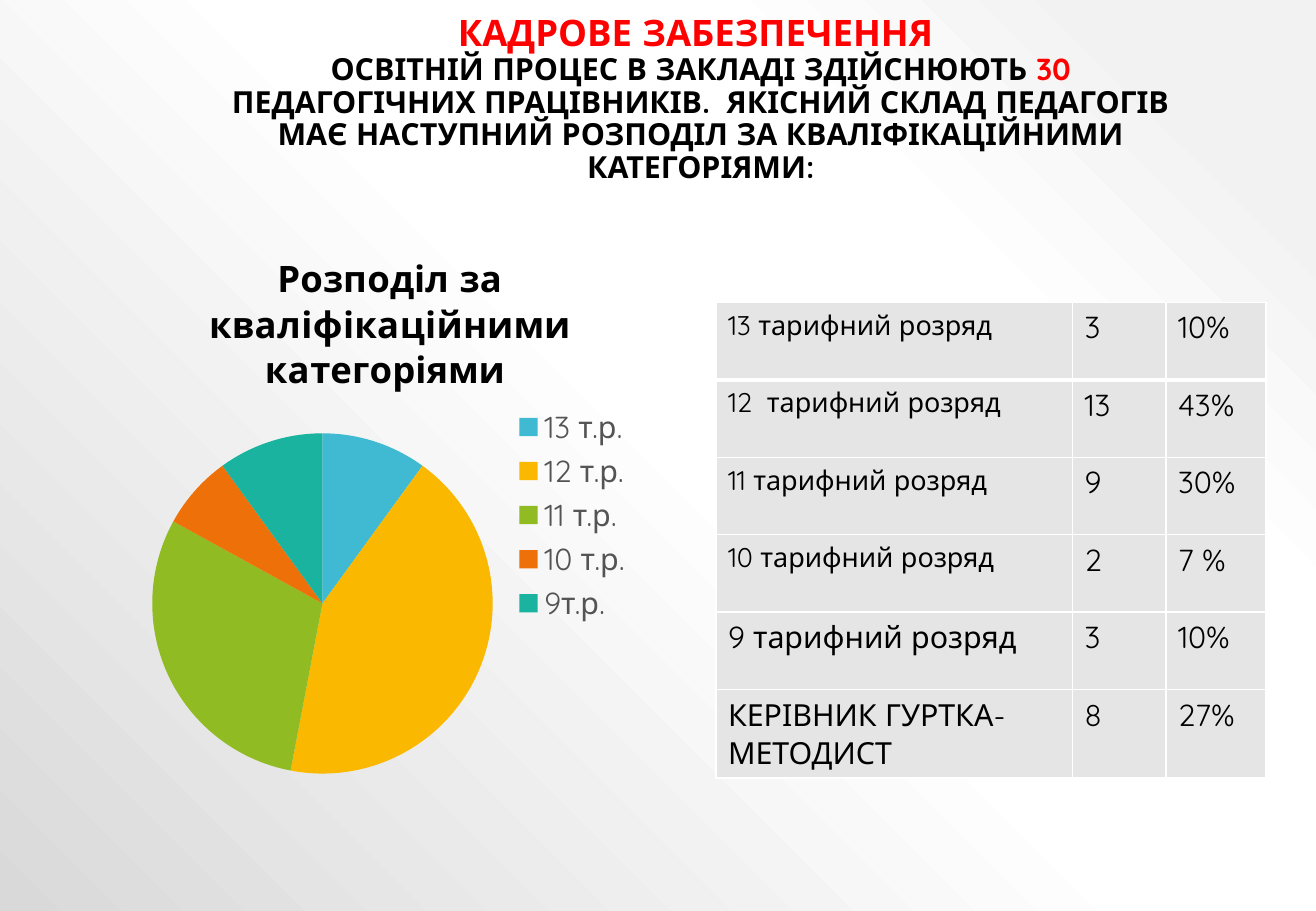
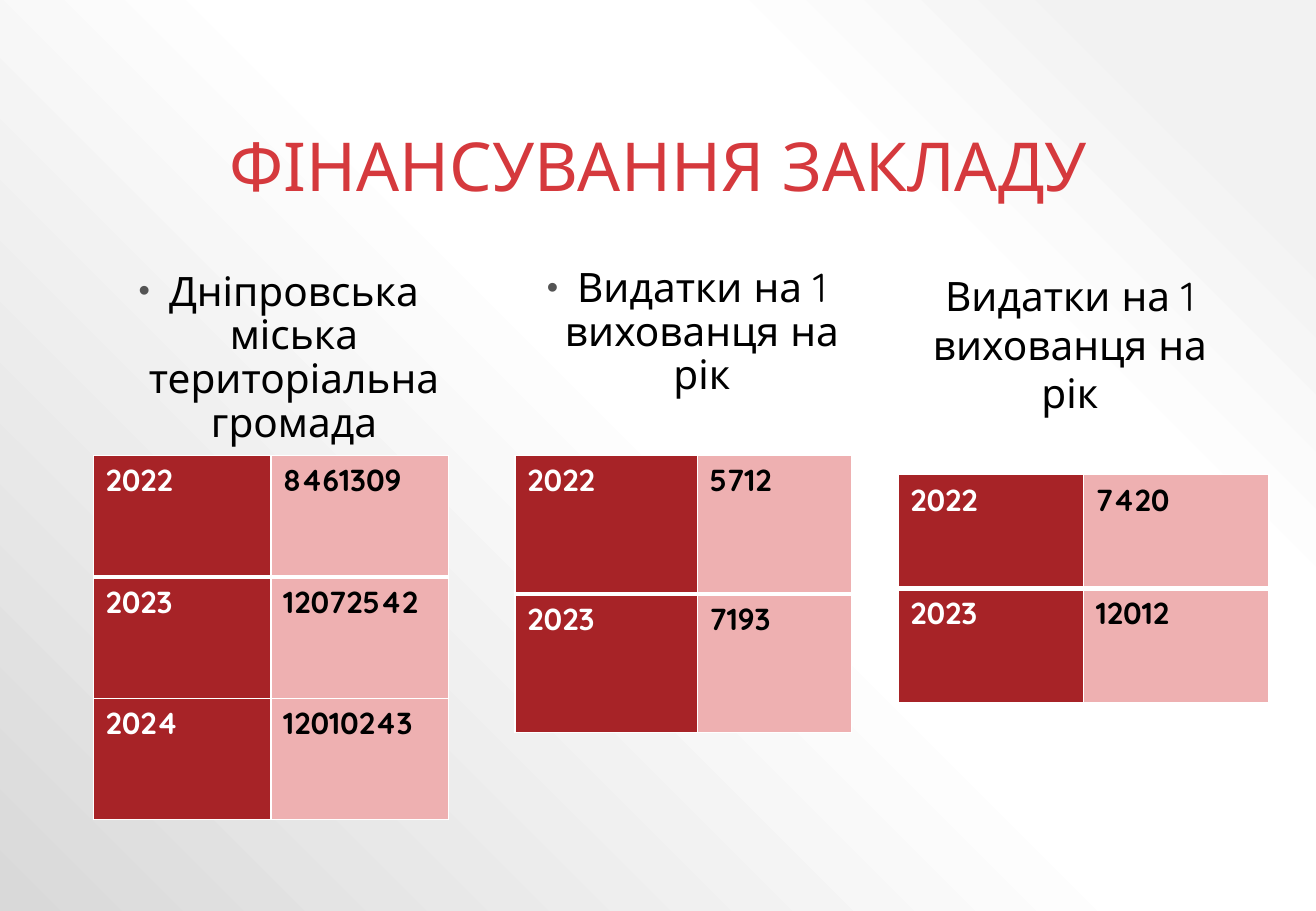
from copy import deepcopy

from lxml import etree
from pptx import Presentation
from pptx.chart.data import CategoryChartData
from pptx.dml.color import RGBColor
from pptx.enum.chart import XL_CHART_TYPE as ChartType, XL_LEGEND_POSITION as LegendPosition
from pptx.enum.text import MSO_ANCHOR as Anchor, MSO_AUTO_SIZE as AutoSize, PP_ALIGN as Align
from pptx.oxml import parse_xml
from pptx.oxml.ns import nsdecls, qn
from pptx.util import Inches, Pt

FONT = "Quicksand"
COLORS = {
    "text": "000000", "white": "FFFFFF", "gray": "545454", "cell": "E5E5E5",
    "accent": "FF0000", "heading": "D5393D", "year": "A72327", "amount": "EEB0B1",
}
PIE_COLORS = ["40BAD2", "FAB900", "90BB23", "EE7008", "1AB39F"]
BACKGROUND_STOPS = [(10, "F2F2F2"), (28, "FFFFFF"), (48, "FFFFFF"), (100, "D9D9D9")]


def rgb(name):
    return RGBColor.from_string(COLORS[name])


def style_font(font, size=18, color="text", bold=False):
    font.name, font.size, font.bold = FONT, Pt(size), bold
    font.color.rgb = rgb(color)


def write(paragraph, text, align=None, spacing=None, **font_style):
    """Append a formatted run; a final newline becomes a line break."""
    if align is not None:
        paragraph.alignment = align
    if spacing is not None:
        paragraph.line_spacing = spacing
    run = paragraph.add_run()
    run.text = text.rstrip("\n")
    style_font(run.font, **font_style)
    if text.endswith("\n"):
        paragraph.add_line_break()
        paragraph._p[-1].append(deepcopy(run._r.rPr))


def add_bullet(paragraph):
    properties = paragraph._p.get_or_add_pPr()
    properties.set("marL", str(Inches(0.3)))
    properties.set("indent", str(Inches(-0.25)))
    color = etree.SubElement(properties, qn("a:buClr"))
    etree.SubElement(color, qn("a:srgbClr"), val=COLORS["gray"])
    etree.SubElement(properties, qn("a:buSzPct"), val="80000")
    etree.SubElement(properties, qn("a:buFont"), typeface="Arial")
    etree.SubElement(properties, qn("a:buChar"), char="•")


def set_borders(cell, row):
    """Thin white borders, with a thick rule below the first row."""
    thick_side = {0: "lnB", 1: "lnT"}.get(row)
    for side in ("lnL", "lnR", "lnT", "lnB"):
        width = Pt(3 if side == thick_side else 1)
        cell._tc.get_or_add_tcPr().append(parse_xml(
            f'<a:{side} {nsdecls("a")} w="{width}"><a:solidFill>'
            f'<a:srgbClr val="{COLORS["white"]}"/></a:solidFill></a:{side}>'))


class Deck:
    """Holds the style and the current slide; lengths are percent of the slide."""

    def __init__(self):
        self.presentation = Presentation()
        self.presentation.slide_width = Inches(10.83)
        self.presentation.slide_height = Inches(7.5)
        self.slide = None
        self.set_background()

    def set_background(self):
        master = self.presentation.slide_master
        master.background.fill.gradient()
        plain = master.element.xpath("p:cSld/p:bg/p:bgPr/a:gradFill")[0]
        stops = "".join(f'<a:gs pos="{position * 1000}"><a:srgbClr val="{color}"/></a:gs>'
                        for position, color in BACKGROUND_STOPS)
        plain.getparent().replace(plain, parse_xml(
            f'<a:gradFill {nsdecls("a")} rotWithShape="1"><a:gsLst>{stops}</a:gsLst>'
            '<a:path path="circle"><a:fillToRect l="100000" b="100000"/></a:path></a:gradFill>'))

    def across(self, percent):
        return round(self.presentation.slide_width * percent / 100)

    def down(self, percent):
        return round(self.presentation.slide_height * percent / 100)

    def box(self, left, top, width, height):
        return self.across(left), self.down(top), self.across(width), self.down(height)

    def add_slide(self):
        self.slide = self.presentation.slides.add_slide(self.presentation.slide_layouts[5])

    def title(self, box, runs, bottom_inset=0.05):
        title = self.slide.shapes.title
        title.left, title.top, title.width, title.height = self.box(*box)
        frame = title.text_frame
        frame.auto_size, frame.vertical_anchor = AutoSize.NONE, Anchor.BOTTOM
        frame.margin_bottom = Inches(bottom_inset)
        for text, font_style in runs:
            write(frame.paragraphs[0], text, align=Align.CENTER, spacing=0.9, **font_style)

    def caption(self, box, text, bullet=False):
        frame = self.slide.shapes.add_textbox(*self.box(*box)).text_frame
        frame.word_wrap = True
        paragraph = frame.paragraphs[0]
        if bullet:
            add_bullet(paragraph)
        write(paragraph, text, align=Align.CENTER, spacing=0.9 if bullet else None, size=24)

    def table(self, left, top, columns, row_height, rows, cell_style):
        """Draw rows of text; cell_style(row, column) gives the fill and the font format."""
        box = self.box(left, top, sum(columns), row_height * len(rows))
        table = self.slide.shapes.add_table(len(rows), len(columns), *box).table
        table.first_row = table.horz_banding = False
        for column, width in zip(table.columns, columns):
            column.width = self.across(width)
        for row_index, values in enumerate(rows):
            table.rows[row_index].height = self.down(row_height)
            for column_index, text in enumerate(values):
                cell = table.cell(row_index, column_index)
                fill, font_style = cell_style(row_index, column_index)
                set_borders(cell, row_index)
                cell.fill.solid()
                cell.fill.fore_color.rgb = rgb(fill)
                write(cell.text_frame.paragraphs[0], text, **font_style)

    def pie(self, box, title, values):
        data = CategoryChartData()
        data.categories = list(values)
        data.add_series(title, list(values.values()))
        chart = self.slide.shapes.add_chart(ChartType.PIE, *self.box(*box), data).chart
        style_font(chart.font, color="gray")
        chart.has_title = True
        write(chart.chart_title.text_frame.paragraphs[0], title, size=21.6, bold=True)
        chart.chart_title.include_in_layout = False
        chart.has_legend = True
        chart.legend.position = LegendPosition.RIGHT
        chart.legend.include_in_layout = False
        style_font(chart.legend.font, color="gray")
        plot = chart.plots[0]
        plot.vary_by_categories = True
        for index, color in enumerate(PIE_COLORS):
            point = plot.series[0].points[index]
            point.format.fill.solid()
            point.format.fill.fore_color.rgb = RGBColor.from_string(color)
            point.format.line.fill.background()


def staff_style(row, column):
    return "cell", {"size": 16 if column == 0 and row < 4 else 18}


def funding_style(row, column):
    if column == 0:
        return "year", {"color": "white", "bold": True}
    return "amount", {"bold": True}


def build_staff_slide(deck):
    deck.add_slide()
    deck.title((16.1, 3.1, 74.3, 25.1), [
        ("КАДРОВЕ ЗАБЕЗПЕЧЕННЯ \n", {"size": 21.6, "color": "accent", "bold": True}),
        ("ОСВІТНІЙ ПРОЦЕС В ЗАКЛАДІ ЗДІЙСНЮЮТЬ", {"bold": True}),
        (" 30 ", {"color": "accent", "bold": True}),
        ("ПЕДАГОГІЧНИХ ПРАЦІВНИКІВ.  ЯКІСНИЙ СКЛАД ПЕДАГОГІВ МАЄ НАСТУПНИЙ "
         "РОЗПОДІЛ ЗА КВАЛІФІКАЦІЙНИМИ КАТЕГОРІЯМИ:", {"bold": True}),
    ], bottom_inset=0.59)
    deck.pie((10.3, 24.9, 38.7, 63.3), "Розподіл за кваліфікаційними категоріями ",
             {"13 т.р.": 10, "12 т.р.": 43, "11 т.р.": 30, "10 т.р.": 7, "9т.р.": 10})
    deck.table(54.4, 33.2, [27.1, 7.1, 7.6], 8.5, [
        ("13 тарифний розряд", "3", "10%"),
        ("12  тарифний розряд", "13", "43%"),
        ("11 тарифний розряд", "9", "30%"),
        ("10 тарифний розряд", "2", "7 %"),
        ("9 тарифний розряд", "3", "10%"),
        ("КЕРІВНИК ГУРТКА-МЕТОДИСТ", "8", "27%"),
    ], staff_style)


def build_funding_slide(deck):
    deck.add_slide()
    deck.title((10, 4, 80, 19.3), [("ФІНАНСУВАННЯ ЗАКЛАДУ", {"size": 40, "color": "heading"})])
    cost_caption = "Видатки на 1 вихованця на рік"
    deck.caption((6.4, 29.1, 29.1, 60.9), "Дніпровська міська територіальна громада", bullet=True)
    deck.caption((39.1, 28.7, 25.7, 60.9), cost_caption, bullet=True)
    deck.caption((68.3, 29.1, 26, 17.5), cost_caption)
    for left, top, columns, row_height, amounts in [
        (7.1, 50, [13.5, 13.5], 13.33, ["8461309", "12072542", "12010243"]),
        (39.15, 50, [13.85, 11.7], 15.2, ["5712", "7193"]),
        (68.25, 52.1, [14.1, 14.1], 12.5, ["7420", "12012"]),
    ]:
        rows = [(str(year), amount) for year, amount in enumerate(amounts, start=2022)]
        deck.table(left, top, columns, row_height, rows, funding_style)


def main():
    deck = Deck()
    build_staff_slide(deck)
    build_funding_slide(deck)
    deck.presentation.save("out.pptx")


if __name__ == "__main__":
    main()
